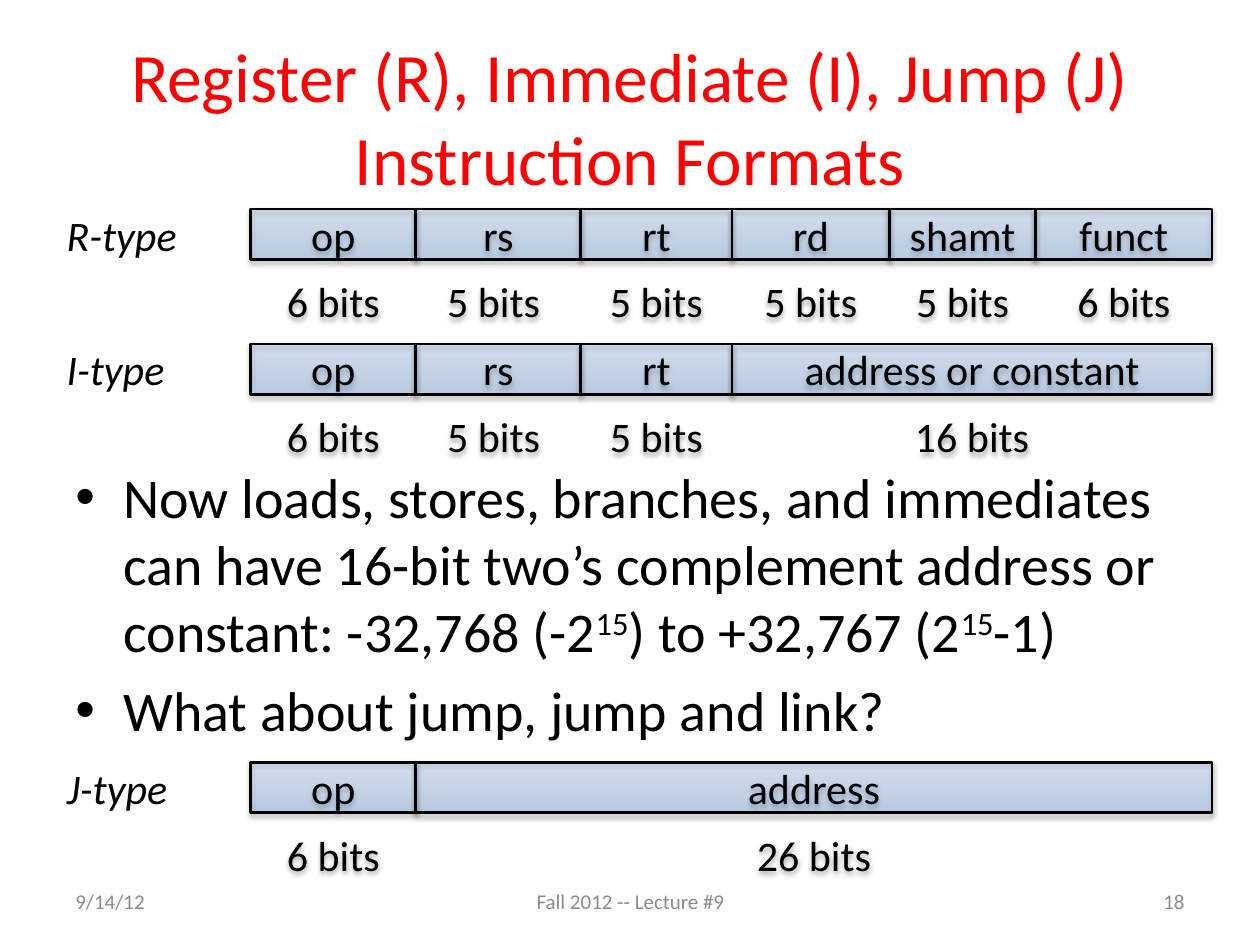
from lxml.etree import SubElement
from pptx import Presentation
from pptx.dml.color import RGBColor
from pptx.enum.shapes import MSO_SHAPE
from pptx.enum.text import MSO_ANCHOR, PP_ALIGN
from pptx.oxml.ns import qn
from pptx.util import Inches, Pt

# Content
TITLE = "Register (R), Immediate (I), Jump (J) Instruction Formats"
BULLETS = [
    [("Now loads, stores, branches, and immediates can have 16-bit two’s "
      "complement address or constant: -32,768 (-2", 0),
     ("15", 30), (") to +32,767 (2", 0), ("15", 30), ("-1)", 0)],
    [("What about jump, jump and link?", 0)],
]
# Each format: label, top, fields as (name, bits, columns spanned)
FORMATS = [
    ("R-type", 1.66, [("op", "6 bits", 1), ("rs", "5 bits ", 1), ("rt", "5 bits", 1),
                      ("rd", "5 bits", 1), ("shamt", "5 bits", 1), ("funct", "6 bits", 1)]),
    ("I-type", 2.73, [("op", "6 bits", 1), ("rs", "5 bits ", 1), ("rt", "5 bits", 1),
                      ("address or constant", "16 bits", 3)]),
    ("J-type", 6.05, [("op", "6 bits", 1), ("address", "26 bits", 5)]),
]
FOOTER = [("9/14/12", 0.5, 2.33, PP_ALIGN.LEFT),
          ("Fall 2012 -- Lecture #9", 3.42, 3.17, PP_ALIGN.CENTER),
          ("18", 7.17, 2.33, PP_ALIGN.RIGHT)]

# Layout and colours
EDGES = [1.99, 3.3, 4.61, 5.81, 7.06, 8.22, 9.62]
FIELD_H, BITS_DROP = 0.4, 0.53
COLORS = {"title": "FF0000", "text": "000000", "footer": "8C8C8C", "line": "000000",
          "shadow": "000000", "fill_low": "3F80CE", "fill_high": "A4C4FF"}


def rgb(name):
    return RGBColor.from_string(COLORS[name])


def write(s, paragraphs, size=24, color="text", align=PP_ALIGN.CENTER,
          anchor=MSO_ANCHOR.MIDDLE, italic=False, wrap=True, bullet=None):
    """Fill a shape with text: a string, or a list of (text, baseline) lists."""
    if isinstance(paragraphs, str):
        paragraphs = [[(paragraphs, 0)]]
    tf = s.text_frame
    tf.word_wrap, tf.vertical_anchor = wrap, anchor
    for i, runs in enumerate(paragraphs):
        p = tf.paragraphs[0] if i == 0 else tf.add_paragraph()
        p.alignment = align
        if bullet:
            p.space_before = Pt(0.2 * size)
            pPr = p._p.get_or_add_pPr()
            pPr.set("marL", str(Inches(0.38)))
            pPr.set("indent", str(-Inches(0.38)))
            SubElement(pPr, qn("a:buFont"), typeface="Arial")
            SubElement(pPr, qn("a:buChar"), char=bullet)
        for text, baseline in runs:
            r = p.add_run()
            r.text = text
            r.font.name, r.font.size, r.font.italic = "Calibri", Pt(size), italic
            r.font.color.rgb = rgb(color)
            if baseline:
                r._r.get_or_add_rPr().set("baseline", str(baseline * 1000))


def text_box(shapes, box, text, **fmt):
    s = shapes.add_textbox(*map(Inches, box))
    write(s, text, **fmt)
    return s


def add_shadow(s):
    effects = SubElement(s._element.spPr, qn("a:effectLst"))
    shadow = SubElement(effects, qn("a:outerShdw"), blurRad=str(Pt(3.1)),
                        dist=str(Pt(1.8)), dir="5400000", rotWithShape="0")
    color = SubElement(shadow, qn("a:srgbClr"), val=COLORS["shadow"])
    SubElement(color, qn("a:alpha"), val="35000")


def field(shapes, box, text):
    s = shapes.add_shape(MSO_SHAPE.RECTANGLE, *map(Inches, box))
    s.fill.gradient()
    s.fill.gradient_angle = 90
    for stop, name in zip(s.fill.gradient_stops, ("fill_low", "fill_high")):
        stop.color.rgb = rgb(name)
        stop.position = 0 if name == "fill_low" else 1
    for color in s._element.spPr.iter(qn("a:srgbClr")):
        SubElement(color, qn("a:alpha"), val="27000")
    s.line.color.rgb = rgb("line")
    s.line.width = Pt(1.5)
    add_shadow(s)
    write(s, text)


def instruction_format(shapes, label, top, fields):
    col = 0
    for name, bits, span in fields:
        left, width = EDGES[col], EDGES[col + span] - EDGES[col]
        field(shapes, (left, top, width, FIELD_H), name)
        add_shadow(text_box(shapes, (left, top + BITS_DROP, width, FIELD_H), bits))
        col += span
    text_box(shapes, (0.43, top - 0.05, 1.17, 0.5), label, italic=True, wrap=False,
             align=PP_ALIGN.LEFT, anchor=MSO_ANCHOR.TOP)


def main():
    prs = Presentation()
    prs.slide_width, prs.slide_height = Inches(10), Inches(7.5)
    shapes = prs.slides.add_slide(prs.slide_layouts[6]).shapes

    # Title and bullets
    text_box(shapes, (0.5, 0.3, 9, 1.25), TITLE, size=39.6, color="title")
    text_box(shapes, (0.5, 3.62, 9.31, 3), BULLETS, size=32, bullet="•",
             align=PP_ALIGN.LEFT, anchor=MSO_ANCHOR.TOP)

    # Footer
    for text, left, width, align in FOOTER:
        text_box(shapes, (left, 6.95, width, 0.4), text, size=12, color="footer", align=align)

    # Instruction formats, one group each
    for label, top, fields in FORMATS:
        instruction_format(shapes.add_group_shape().shapes, label, top, fields)

    prs.save("out.pptx")


if __name__ == "__main__":
    main()
